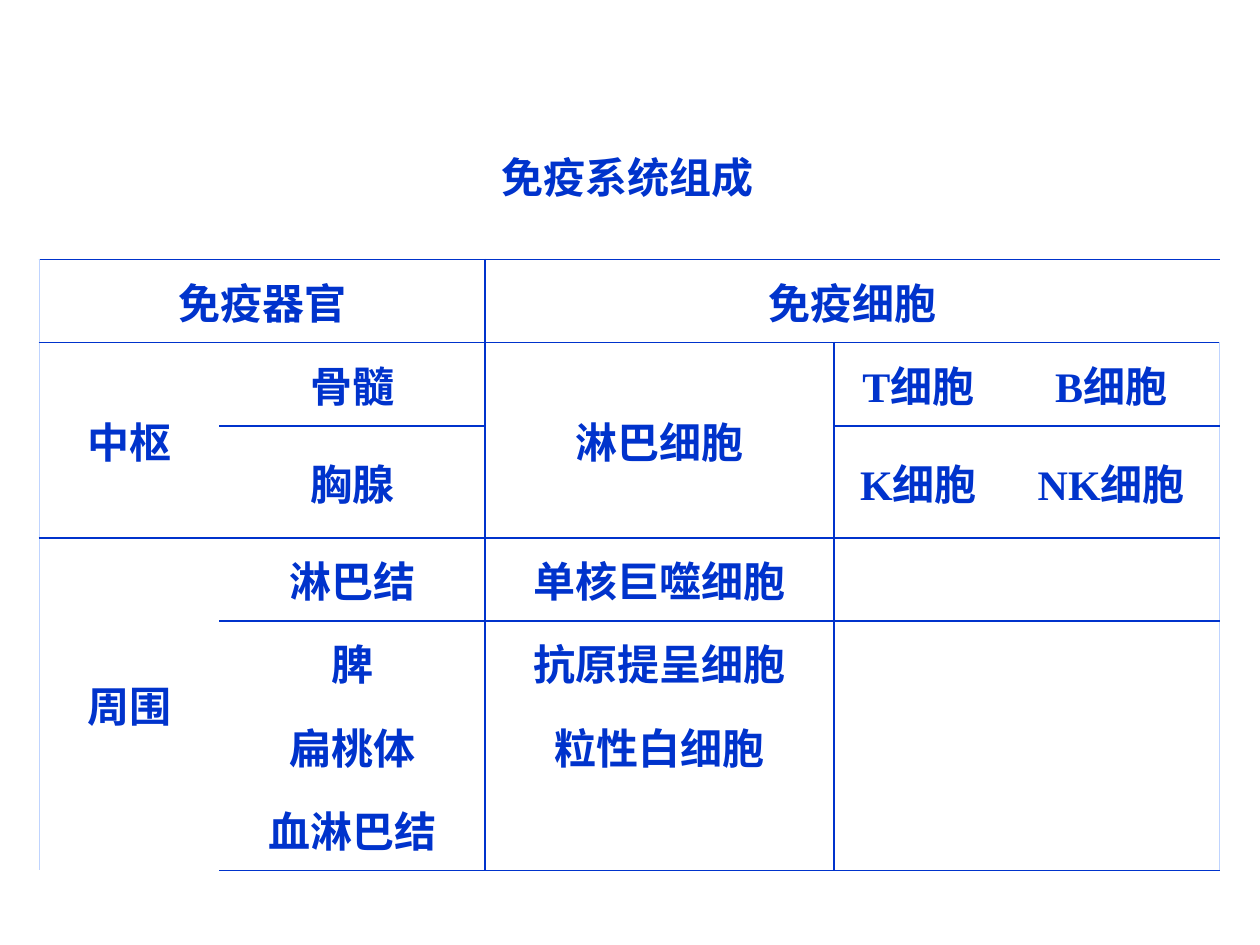
from typing import NamedTuple

from lxml.etree import SubElement
from pptx import Presentation
from pptx.dml.color import RGBColor
from pptx.enum.text import MSO_ANCHOR, MSO_AUTO_SIZE, PP_ALIGN
from pptx.oxml.ns import qn
from pptx.util import Inches, Pt

BLUE, PALE, WHITE = "0033CC", "BFD4FF", "FFFFFF"
HAN_FONT, LATIN_FONT = "Noto Sans CJK SC", "Times New Roman"
COLUMN_WIDTHS = [1.43, 2.11, 2.77, 1.34, 1.72]
ROW_HEIGHTS = [0.66, 0.66, 0.89, 0.66, 0.66, 0.66, 0.66]


class Entry(NamedTuple):
    row: int
    column: int
    text: str
    font: str = HAN_FONT
    rows: int = 1
    columns: int = 1


class Rule(NamedTuple):
    color: str
    width: float


ENTRIES = [
    Entry(0, 0, "免疫器官", columns=2),
    Entry(0, 2, "免疫细胞", columns=3),
    Entry(1, 0, "中枢", rows=2),
    Entry(1, 1, "骨髓"),
    Entry(1, 2, "淋巴细胞", rows=2),
    Entry(1, 3, "T细胞", LATIN_FONT),
    Entry(1, 4, "B细胞", LATIN_FONT),
    Entry(2, 1, "胸腺"),
    Entry(2, 3, "K细胞", LATIN_FONT),
    Entry(2, 4, "NK细胞", LATIN_FONT),
    Entry(3, 0, "周围", rows=4),
    Entry(3, 1, "淋巴结"),
    Entry(3, 2, "单核巨噬细胞"),
    Entry(4, 1, "脾"),
    Entry(4, 2, "抗原提呈细胞"),
    Entry(5, 1, "扁桃体"),
    Entry(5, 2, "粒性白细胞"),
    Entry(6, 1, "血淋巴结"),
]

MAIN_RULE, SIDE_RULE = Rule(BLUE, 1), Rule(PALE, 0.5)
# Boundary number -> the columns (or rows) along which its rule runs.
HORIZONTAL = {0: range(5), 1: range(5), 2: (1, 3, 4), 3: range(5),
              4: range(1, 5), 7: range(5)}
VERTICAL = {0: range(7), 2: range(7), 3: range(1, 7), 5: range(7)}


def rgb(color: str) -> RGBColor:
    return RGBColor.from_string(color)


def add_text(para, text: str, font: str) -> None:
    span = para.add_run()
    span.text = text
    span.font.name = font
    span.font.size = Pt(24)
    span.font.bold = True
    span.font.color.rgb = rgb(BLUE)
    SubElement(span.font._element, qn("a:ea"), typeface=HAN_FONT)


def horizontal_rule(boundary: int, column: int) -> Rule | None:
    return MAIN_RULE if column in HORIZONTAL.get(boundary, ()) else None


def vertical_rule(boundary: int, row: int) -> Rule | None:
    if row not in VERTICAL.get(boundary, ()):
        return None
    return SIDE_RULE if boundary in (0, len(COLUMN_WIDTHS)) else MAIN_RULE


def set_border(cell, side: str, rule: Rule | None) -> None:
    line = SubElement(cell._tc.get_or_add_tcPr(), qn(f"a:ln{side}"))
    if rule is None:
        line.set("w", "0")
        SubElement(line, qn("a:noFill"))
        return
    line.set("w", str(Pt(rule.width)))
    fill = SubElement(line, qn("a:solidFill"))
    SubElement(fill, qn("a:srgbClr"), val=rule.color)


def format_cell(cell, row: int, column: int) -> None:
    set_border(cell, "L", vertical_rule(column, row))
    set_border(cell, "R", vertical_rule(column + 1, row))
    set_border(cell, "T", horizontal_rule(row, column))
    set_border(cell, "B", horizontal_rule(row + 1, column))
    cell.fill.solid()
    cell.fill.fore_color.rgb = rgb(WHITE)
    cell.vertical_anchor = MSO_ANCHOR.MIDDLE


def add_entry(table, entry: Entry) -> None:
    cell = table.cell(entry.row, entry.column)
    if entry.rows * entry.columns > 1:
        cell.merge(table.cell(entry.row + entry.rows - 1,
                              entry.column + entry.columns - 1))
    para = cell.text_frame.paragraphs[0]
    para.alignment = PP_ALIGN.CENTER
    add_text(para, entry.text, entry.font)


def add_immune_table(page) -> None:
    frame = page.shapes.add_table(
        len(ROW_HEIGHTS), len(COLUMN_WIDTHS), Inches(0.31), Inches(2.06),
        Inches(sum(COLUMN_WIDTHS)), Inches(sum(ROW_HEIGHTS)))
    table = frame.table
    table.first_row = table.horz_banding = False
    for column, width in zip(table.columns, COLUMN_WIDTHS):
        column.width = Inches(width)
    for row, height in zip(table.rows, ROW_HEIGHTS):
        row.height = Inches(height)
    for row in range(len(ROW_HEIGHTS)):
        for column in range(len(COLUMN_WIDTHS)):
            format_cell(table.cell(row, column), row, column)
    for entry in ENTRIES:
        add_entry(table, entry)


def set_title(page) -> None:
    title = page.shapes.title
    title.left, title.top = Inches(3.88), Inches(1.15)
    title.width, title.height = Inches(2.21), Inches(0.5)
    text = title.text_frame
    text.word_wrap = False
    text.auto_size = MSO_AUTO_SIZE.SHAPE_TO_FIT_TEXT
    text.vertical_anchor = MSO_ANCHOR.TOP
    para = text.paragraphs[0]
    para.alignment = PP_ALIGN.LEFT
    add_text(para, "免疫系统组成", "Arial")


def main() -> None:
    deck = Presentation()
    deck.slide_width, deck.slide_height = Inches(10), Inches(7.5)
    page = deck.slides.add_slide(deck.slide_layouts[5])
    add_immune_table(page)
    set_title(page)
    deck.save("out.pptx")


if __name__ == "__main__":
    main()
